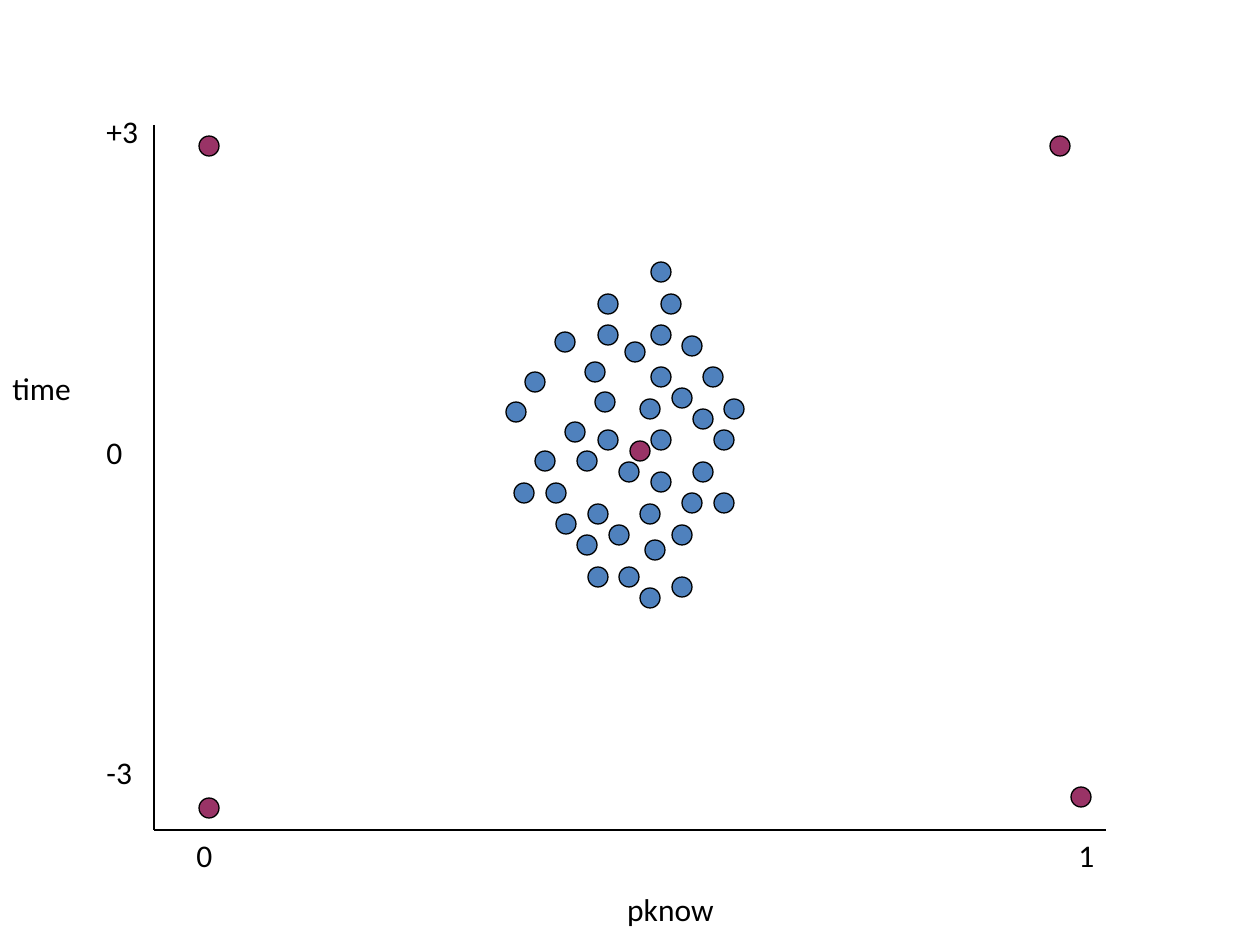
from dataclasses import dataclass
from lxml.etree import SubElement
from pptx import Presentation
from pptx.dml.color import RGBColor
from pptx.enum.shapes import MSO_CONNECTOR, MSO_SHAPE
from pptx.enum.text import PP_ALIGN
from pptx.oxml.ns import qn
from pptx.util import Emu, Inches, Pt


@dataclass(frozen=True)
class Theme:
    font: str = "Calibri"
    size: int = 18
    ink: RGBColor = RGBColor(0, 0, 0)
    student: RGBColor = RGBColor(0x4F, 0x81, 0xBD)
    extreme: RGBColor = RGBColor(0x99, 0x33, 0x66)
    line: float = 0.75


THEME = Theme()
DOT = 20
PLOT = (154, 125, 952, 705)
X_LABELS = (184, 830, 973, 107)
Y_LABELS = (94, 106, 80, 733)
Y_TITLE = (0, 363, 105, 50)

CLUSTER = [
    (507, 147), (454, 179), (517, 179), (454, 210), (507, 210), (411, 217),
    (538, 221), (481, 227), (441, 247), (507, 252), (559, 252), (381, 257),
    (528, 273), (451, 277), (496, 284), (580, 284), (362, 287), (549, 294),
    (421, 307), (454, 315), (507, 315), (570, 315), (391, 336), (433, 336),
    (475, 347), (549, 347), (507, 357), (370, 368), (402, 368), (538, 378),
    (570, 378), (444, 389), (496, 389), (412, 399), (465, 410), (528, 410),
    (433, 420), (501, 425), (444, 452), (475, 452), (528, 462), (496, 473),
]
EXTREMES = [(55, 21), (906, 21), (927, 672), (55, 683), (486, 326)]


def px(n):
    return Emu(round(n * 914400 / 126))


def add_axis(s, x1, y1, x2, y2):
    axis = s.shapes.add_connector(MSO_CONNECTOR.STRAIGHT, px(x1), px(y1), px(x2), px(y2))
    axis.line.color.rgb = THEME.ink
    axis.line.width = Pt(THEME.line)
    SubElement(axis._element.spPr, qn("a:effectLst"))


def add_dot(s, x, y, color):
    sp = s.shapes.add_shape(MSO_SHAPE.OVAL, px(x - DOT / 2), px(y - DOT / 2), px(DOT), px(DOT))
    sp.shadow.inherit = False
    sp.fill.solid()
    sp.fill.fore_color.rgb = color
    sp.line.color.rgb = THEME.ink
    sp.line.width = Pt(THEME.line)


def add_text(s, box, text, gap=0):
    tf = s.shapes.add_textbox(*map(px, box)).text_frame
    tf.word_wrap = True
    tf.text = text
    for i, p in enumerate(tf.paragraphs):
        p.space_before = Pt(gap if i else 0)
        for r in p.runs:
            r.font.name = THEME.font
            r.font.size = Pt(THEME.size)
            r.font.color.rgb = THEME.ink
    return tf


def add_plot(s, box):
    x, y, w, h = box
    add_axis(s, x, y, x, y + h)
    add_axis(s, x, y + h, x + w, y + h)
    for points, color in ((CLUSTER, THEME.student), (EXTREMES, THEME.extreme)):
        for dx, dy in points:
            add_dot(s, x + dx, y + dy, color)


def add_x_labels(s, box):
    scale, title = add_text(s, box, "0\t1\npknow", gap=9).paragraphs
    tabs = SubElement(scale._p.get_or_add_pPr(), qn("a:tabLst"))
    SubElement(tabs, qn("a:tab"), pos=str(Inches(7)), algn="l")
    title.alignment = PP_ALIGN.CENTER


def add_y_labels(s, box, title_box):
    add_text(s, title_box, "time")
    add_text(s, box, "+3\n0\n-3", gap=161.5)


def main():
    prs = Presentation()
    prs.slide_width, prs.slide_height = Inches(10), Inches(7.5)
    s = prs.slides.add_slide(prs.slide_layouts[6])
    add_x_labels(s, X_LABELS)
    add_y_labels(s, Y_LABELS, Y_TITLE)
    add_plot(s, PLOT)
    prs.save("out.pptx")


if __name__ == "__main__":
    main()
